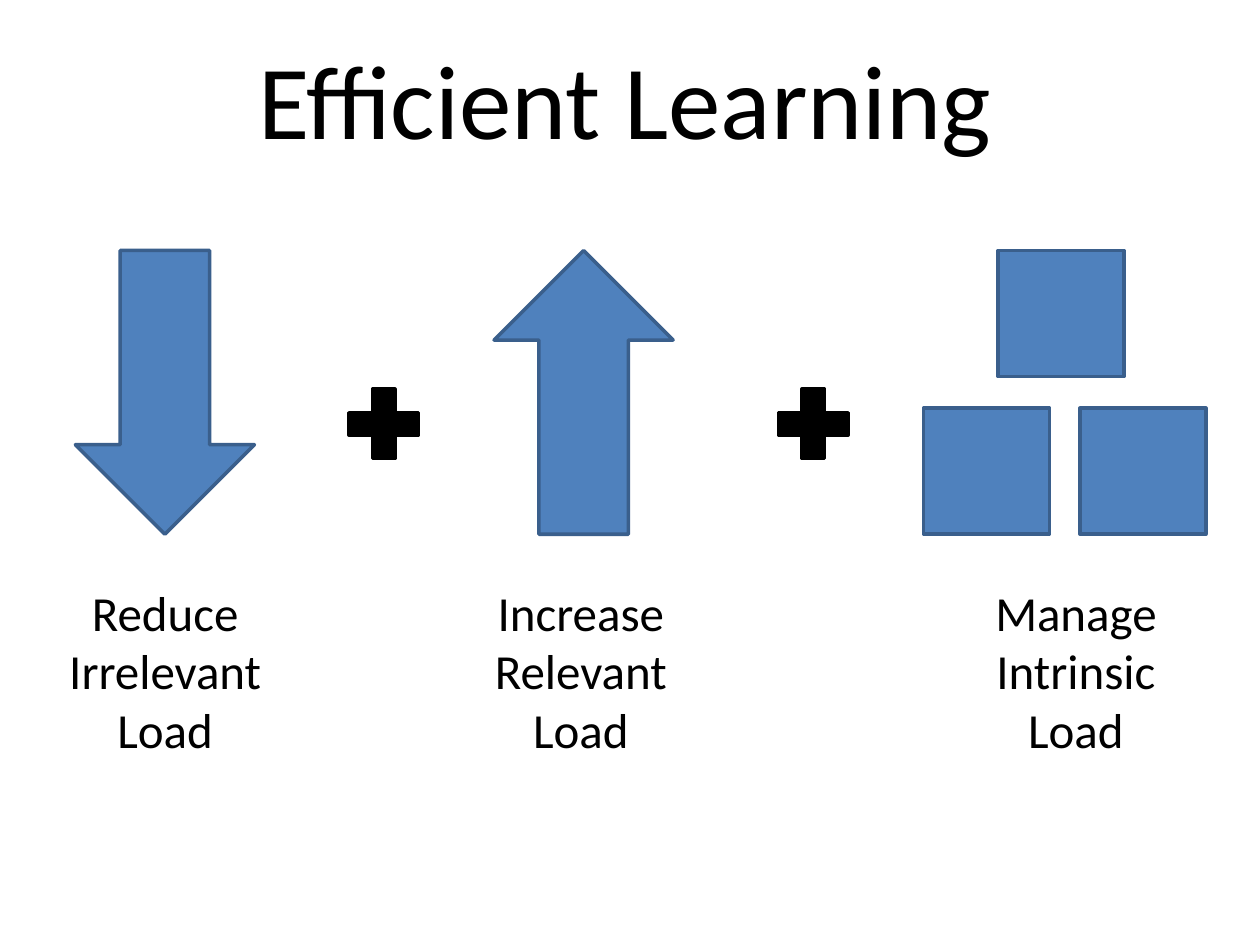
from pptx import Presentation
from pptx.dml.color import RGBColor
from pptx.enum.shapes import MSO_SHAPE
from pptx.enum.text import MSO_ANCHOR, MSO_AUTO_SIZE, PP_ALIGN
from pptx.util import Cm, Pt

BLUE = RGBColor(0x4F, 0x81, 0xBD)
DARK_BLUE = RGBColor(0x3A, 0x5F, 0x8C)
BLACK = RGBColor(0, 0, 0)

DOWN_ARROW = MSO_SHAPE.DOWN_ARROW
SQUARE = MSO_SHAPE.RECTANGLE
PLUS = MSO_SHAPE.MATH_PLUS
LEFT = PP_ALIGN.LEFT
CENTER = PP_ALIGN.CENTER
TOP = MSO_ANCHOR.TOP
GROW = MSO_AUTO_SIZE.SHAPE_TO_FIT_TEXT

FONT = "Calibri"
ICON_TOP = 5.05
ARROW_WIDTH, ARROW_HEIGHT = 3.61, 5.72
BLOCK_SIZE = 2.54
LOWER_BLOCK_TOP = ICON_TOP + ARROW_HEIGHT - BLOCK_SIZE
PLUS_SIZE = 1.91
PLUS_TOP = 7.59
LABEL_TOP, LABEL_WIDTH, LABEL_HEIGHT = 11.61, 4.88, 3.84


def write_text(box, text, size, alignment):
    frame = box.text_frame
    frame.text = text
    frame.word_wrap = True
    frame.auto_size = GROW
    frame.vertical_anchor = TOP
    para = frame.paragraphs[0]
    para.alignment = alignment
    para.font.name = FONT
    para.font.size = Pt(size)
    para.font.color.rgb = BLACK


def place_title(slide, text):
    title = slide.shapes.title
    title.left, title.top = Cm(4.95), Cm(0.56)
    title.width, title.height = Cm(17.27), Cm(2.82)
    write_text(title, text, 60, LEFT)


def add_icon(slide, kind, left, top, width, height, fill=BLUE, line=DARK_BLUE):
    icon = slide.shapes.add_shape(kind, Cm(left), Cm(top), Cm(width), Cm(height))
    icon.shadow.inherit = False
    icon.fill.solid()
    icon.fill.fore_color.rgb = fill
    icon.line.color.rgb = line
    icon.line.width = Pt(2)
    return icon


def add_arrow(slide, left, rotation):
    arrow = add_icon(slide, DOWN_ARROW, left, ICON_TOP, ARROW_WIDTH, ARROW_HEIGHT)
    arrow.rotation = rotation


def add_label(slide, left, text):
    label = slide.shapes.add_textbox(
        Cm(left), Cm(LABEL_TOP), Cm(LABEL_WIDTH), Cm(LABEL_HEIGHT)
    )
    write_text(label, text, 28, CENTER)


def main():
    deck = Presentation()
    deck.slide_width, deck.slide_height = Cm(25.4), Cm(19.05)
    slide = deck.slides.add_slide(deck.slide_layouts.get_by_name("Title Only"))

    place_title(slide, "Efficient Learning")
    for left, rotation in ((1.52, 0), (9.96, 180)):
        add_arrow(slide, left, rotation)
    for left, top in (
        (20.12, ICON_TOP),
        (18.62, LOWER_BLOCK_TOP),
        (21.77, LOWER_BLOCK_TOP),
    ):
        add_icon(slide, SQUARE, left, top, BLOCK_SIZE, BLOCK_SIZE)
    for left in (6.78, 15.44):
        add_icon(slide, PLUS, left, PLUS_TOP, PLUS_SIZE, PLUS_SIZE, BLACK, BLACK)
    for left, text in (
        (0.89, "Reduce Irrelevant Load"),
        (9.27, "Increase Relevant Load"),
        (19.25, "Manage Intrinsic Load"),
    ):
        add_label(slide, left, text)

    deck.save("out.pptx")


if __name__ == "__main__":
    main()
